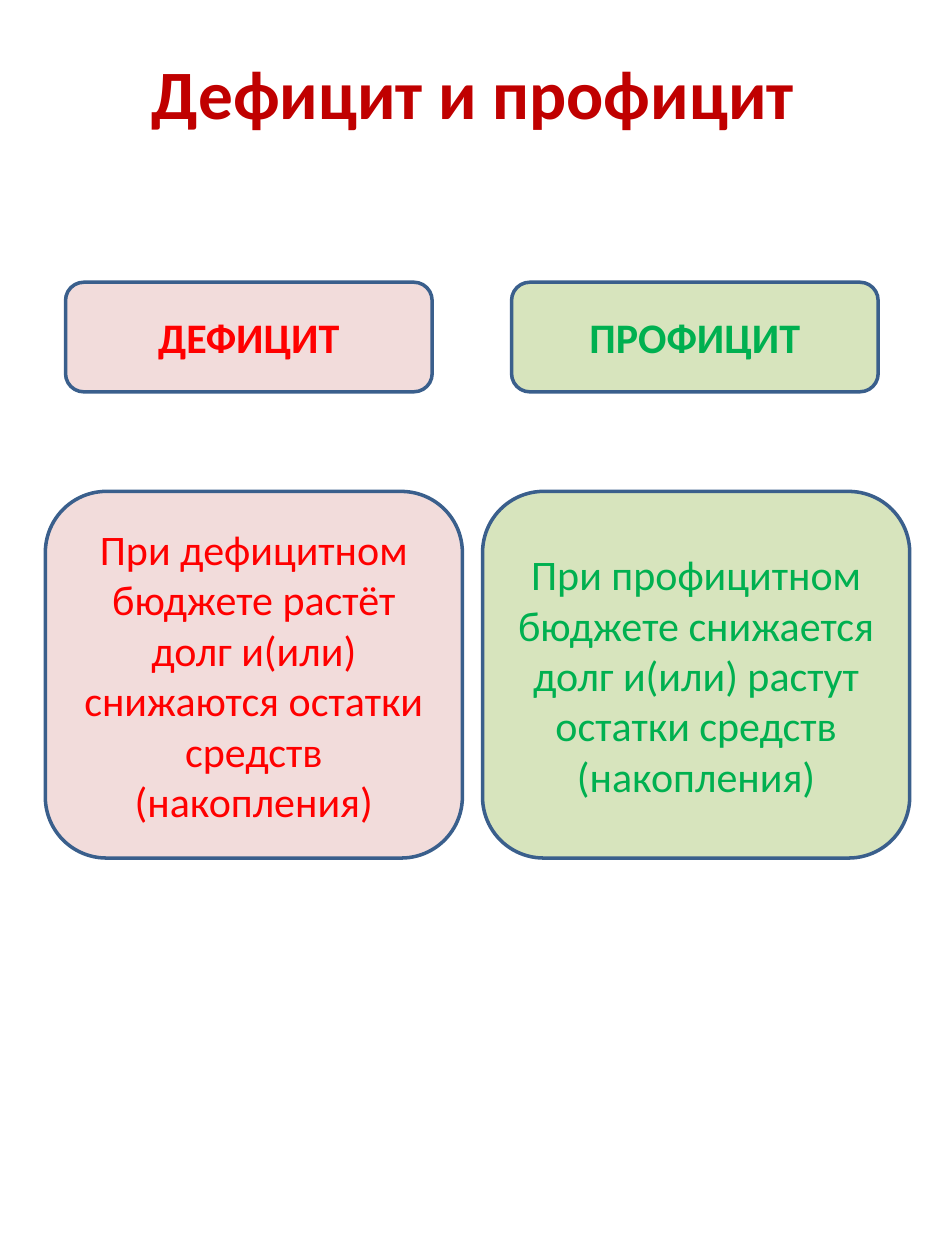
from pptx import Presentation
from pptx.dml.color import RGBColor
from pptx.enum.shapes import MSO_SHAPE
from pptx.enum.text import MSO_ANCHOR, PP_ALIGN
from pptx.util import Inches, Pt

ROUNDED = MSO_SHAPE.ROUNDED_RECTANGLE
MIDDLE = MSO_ANCHOR.MIDDLE
CENTER = PP_ALIGN.CENTER

DARK_RED = RGBColor(0xC0, 0x00, 0x00)
RED = RGBColor(0xFF, 0x00, 0x00)
GREEN = RGBColor(0x00, 0xB0, 0x50)
PINK = RGBColor(0xF2, 0xDC, 0xDB)
LIGHT_GREEN = RGBColor(0xD7, 0xE4, 0xBD)
OUTLINE = RGBColor(0x3A, 0x5F, 0x8C)

# Rows shared by both columns: top and height in inches
HEADING_TOP, HEADING_HEIGHT, HEADING_WIDTH = 2.24, 0.87, 2.91
BODY_TOP, BODY_HEIGHT = 3.9, 2.91


def write(box, text, size, color, bold):
    frame = box.text_frame
    frame.word_wrap = True
    frame.vertical_anchor = MIDDLE
    para = frame.paragraphs[0]
    para.alignment = CENTER
    span = para.add_run()
    span.text = text
    span.font.name = "Calibri"
    span.font.size = Pt(size)
    span.font.bold = bold
    span.font.color.rgb = color


deck = Presentation()
deck.slide_width, deck.slide_height = Inches(7.5), Inches(10)
page = deck.slides.add_slide(deck.slide_layouts[5])

# Title
title = page.shapes.title
title.left, title.top = Inches(0.38), Inches(0.4)
title.width, title.height = Inches(6.75), Inches(0.66)
write(title, "Дефицит и профицит", 39.6, DARK_RED, True)

# Columns: fill, text colour, heading left and text, body left, width and text
columns = [
    (PINK, RED, 0.52, "ДЕФИЦИТ", 0.36, 3.31,
     "При дефицитном бюджете растёт долг и(или) "
     "снижаются остатки средств (накопления)"),
    (LIGHT_GREEN, GREEN, 4.06, "ПРОФИЦИТ", 3.83, 3.39,
     "При профицитном бюджете снижается долг и(или) "
     "растут остатки средств (накопления)"),
]

# Heading and explanation in each column
for fill, color, heading_left, heading, body_left, body_width, body in columns:
    for left, top, width, height, text, bold in (
        (heading_left, HEADING_TOP, HEADING_WIDTH, HEADING_HEIGHT, heading, True),
        (body_left, BODY_TOP, body_width, BODY_HEIGHT, body, False),
    ):
        box = page.shapes.add_shape(
            ROUNDED, Inches(left), Inches(top), Inches(width), Inches(height))
        box.shadow.inherit = False
        box.fill.solid()
        box.fill.fore_color.rgb = fill
        box.line.color.rgb = OUTLINE
        box.line.width = Pt(2)
        write(box, text, 24, color, bold)

deck.save("out.pptx")
